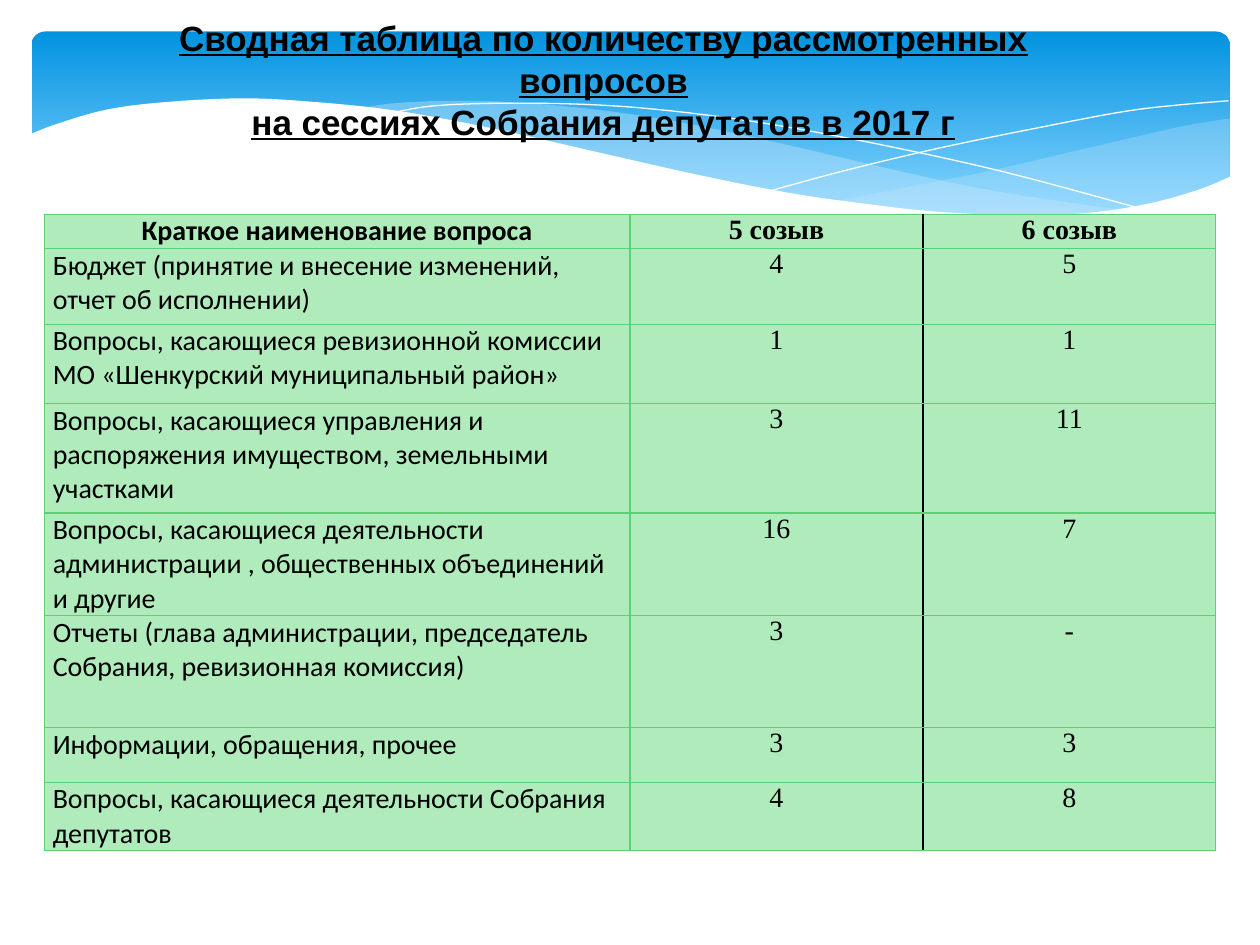
from dataclasses import dataclass

from lxml import etree
from pptx import Presentation
from pptx.dml.color import RGBColor
from pptx.enum.shapes import MSO_SHAPE
from pptx.enum.text import MSO_ANCHOR, MSO_AUTO_SIZE, PP_ALIGN
from pptx.oxml.ns import qn
from pptx.util import Pt

ROUNDED = MSO_SHAPE.ROUNDED_RECTANGLE
CENTER, LEFT = PP_ALIGN.CENTER, PP_ALIGN.LEFT
MIDDLE = MSO_ANCHOR.MIDDLE
NO_AUTOFIT = MSO_AUTO_SIZE.NONE
TITLE_ONLY = 5

COLORS = {
    "sky_top": "0293E0",
    "sky_bottom": "83D3FE",
    "mist": "C6E7FC",
    "white": "FFFFFF",
    "text": "000000",
    "cell": "B0EBBC",
    "grid": "5BD078",
}

Points = list[tuple[float, float]]


@dataclass
class Wave:
    """An outline of smooth edges (knots in points); stroked if open, filled if closed."""
    edges: list[Points]
    color: str
    opacity: int = 100
    closed: bool = True


@dataclass
class Row:
    topic: str
    fifth: str
    sixth: str
    height: float


WAVES = [
    Wave([[(702.7, 67.7), (673.2, 72.7), (619.9, 85), (560.9, 98.6), (475.9, 115.2)],
          [(475.9, 115.2), (507.6, 118.8), (545, 122.4), (586.1, 123.8), (621.4, 122.4),
           (651.6, 117.4), (678.2, 110.9), (702.7, 101.5)]], "mist", 29),
    Wave([[(643, 120.2), (602.6, 114.5), (558, 107.3), (508.3, 96.5), (452.9, 83.5),
           (399.6, 72), (352.1, 64.1), (302.4, 59), (259.9, 57.6), (225.4, 59), (205.9, 61.9)],
          [(205.9, 61.9), (246.2, 67.7), (290.9, 76.3), (353.5, 90.7), (407.5, 103),
           (456.5, 112.3), (500.4, 118.8), (547.9, 123.1), (589, 124.6), (617, 123.1),
           (643, 120.2)]], "mist", 40),
    Wave([[(222.5, 64.8), (247.7, 60.5), (288.7, 59), (337.7, 59.8), (383.8, 63.4),
           (437.8, 70.6), (500.4, 82.1), (572.4, 97.9), (653, 119.5)]], "white", closed=False),
    Wave([[(441.4, 108.7), (483.8, 97.2), (538.6, 84.2), (601.9, 71.3), (644.4, 63.4),
           (675.4, 59.8), (702, 57.6)]], "white", closed=False),
    Wave([[(16.6, 77), (33.1, 70.6), (61.2, 62.6), (95, 58.3), (139, 56.2), (180, 58.3),
           (227.5, 63.4), (281.5, 73.4), (342, 87.1), (399.6, 100.1), (450.7, 110.2),
           (495.4, 116.6), (535.7, 121), (582.5, 123.1), (621.4, 121.7), (655.2, 116.6),
           (684, 108.7), (703.4, 100.8)],
          [(703.4, 161.3), (16.6, 161.3)]], "white"),
]

TITLE = ["Сводная таблица по количеству рассмотренных вопросов",
         "на сессиях Собрания депутатов в 2017 г"]

ROWS = [
    Row("Краткое наименование вопроса", "5 созыв", "6 созыв", 19.4),
    Row("Бюджет (принятие и внесение изменений, отчет об исполнении)", "4", "5", 43.2),
    Row("Вопросы, касающиеся ревизионной комиссии МО «Шенкурский муниципальный район»",
        "1", "1", 45.4),
    Row("Вопросы, касающиеся управления и распоряжения имуществом, земельными участками",
        "3", "11", 62.6),
    Row("Вопросы, касающиеся деятельности администрации , общественных объединений и другие",
        "16", "7", 37.4),
    Row("Отчеты (глава администрации, председатель Собрания, ревизионная комиссия)",
        "3", "-", 64.1),
    Row("Информации, обращения, прочее", "3", "3", 31),
    Row("Вопросы, касающиеся деятельности Собрания депутатов", "4", "8", 35.3),
]
COLUMN_WIDTHS = [334.8, 167.4, 167.4]


def rgb(name: str) -> RGBColor:
    return RGBColor.from_string(COLORS[name])


def smooth(knots: Points, steps: int = 5) -> Points:
    """Sample a Catmull-Rom curve through the knots; two knots stay a straight line."""
    if len(knots) == 2:
        return knots
    padded = [knots[0], *knots, knots[-1]]
    curve = [knots[0]]
    for a, b, c, d in zip(padded, padded[1:], padded[2:], padded[3:]):
        for step in range(1, steps + 1):
            t = step / steps
            x, y = (q + t / 2 * (r - p + t * (2 * p - 5 * q + 4 * r - s
                                              + t * (3 * (q - r) + s - p)))
                    for p, q, r, s in zip(a, b, c, d))
            curve.append((x, y))
    return curve


def draw_sky(slide) -> None:
    sky = slide.shapes.add_shape(ROUNDED, Pt(18), Pt(18), Pt(684.7), Pt(112.3))
    sky.adjustments[0] = 0.07
    sky.shadow.inherit = False
    sky.line.fill.background()
    sky.fill.gradient()
    sky.fill.gradient_angle = 270
    for stop, name, position in zip(sky.fill.gradient_stops,
                                    ("sky_top", "sky_bottom"), (0, 0.9)):
        stop.color.rgb = rgb(name)
        stop.position = position


def draw_wave(slide, wave: Wave) -> None:
    outline = [(Pt(x), Pt(y)) for edge in wave.edges for x, y in smooth(edge)]
    builder = slide.shapes.build_freeform(*outline[0])
    builder.add_line_segments(outline[1:], close=wave.closed)
    shape = builder.convert_to_shape()
    shape.shadow.inherit = False
    if not wave.closed:
        shape.fill.background()
        shape.line.color.rgb = rgb(wave.color)
        shape.line.width = Pt(0)
        return
    shape.line.fill.background()
    shape.fill.solid()
    shape.fill.fore_color.rgb = rgb(wave.color)
    if wave.opacity < 100:
        color = shape.element.spPr.find(qn("a:solidFill"))[0]
        etree.SubElement(color, qn("a:alpha"), val=str(wave.opacity * 1000))


def write_title(slide) -> None:
    title = slide.shapes.title
    title.left, title.top, title.width, title.height = Pt(44.6), Pt(16.6), Pt(600.5), Pt(77.8)
    title.element.getparent().append(title.element)  # in front of the waves
    frame = title.text_frame
    frame.word_wrap = True
    frame.auto_size = NO_AUTOFIT
    frame.vertical_anchor = MIDDLE
    frame.margin_left = frame.margin_right = Pt(8)
    frame.margin_top, frame.margin_bottom = Pt(3.6), Pt(24)
    frame.text = "\n".join(TITLE)
    for line in frame.paragraphs:
        line.alignment = CENTER
        line.line_spacing = Pt(24)
        line.font.name, line.font.size = "Arial", Pt(20)
        line.font.bold = line.font.underline = True
        line.font.color.rgb = rgb("text")


def add_border(cell, side: str, color: str, width: float) -> None:
    border = etree.SubElement(cell._tc.get_or_add_tcPr(), qn(f"a:ln{side}"), w=str(Pt(width)))
    fill = etree.SubElement(border, qn("a:solidFill"))
    etree.SubElement(fill, qn("a:srgbClr"), val=COLORS[color])


def write_cell(cell, text: str, column: int, is_header: bool) -> None:
    dividers = {(1, "R"), (2, "L")}  # the black rule between the two convocations
    for side in "LRTB":
        add_border(cell, side, *(("text", 1) if (column, side) in dividers else ("grid", 0.75)))
    cell.fill.solid()
    cell.fill.fore_color.rgb = rgb("cell")
    cell.margin_left = cell.margin_right = Pt(5)
    cell.margin_top = cell.margin_bottom = Pt(0)
    cell.text = text
    paragraph = cell.text_frame.paragraphs[0]
    paragraph.alignment = CENTER if is_header or column else LEFT
    paragraph.font.name = "Times New Roman" if column else "Calibri"
    paragraph.font.size = Pt(16)
    paragraph.font.bold = is_header
    paragraph.font.color.rgb = rgb("text")


def draw_table(slide) -> None:
    table = slide.shapes.add_table(
        len(ROWS), len(COLUMN_WIDTHS), Pt(25.2), Pt(122.4),
        Pt(sum(COLUMN_WIDTHS)), Pt(sum(row.height for row in ROWS))).table
    for column, width in zip(table.columns, COLUMN_WIDTHS):
        column.width = Pt(width)
    for index, row in enumerate(ROWS):
        table.rows[index].height = Pt(row.height)
        for column, text in enumerate((row.topic, row.fifth, row.sixth)):
            write_cell(table.cell(index, column), text, column, index == 0)


def main() -> None:
    deck = Presentation()
    deck.slide_width, deck.slide_height = Pt(720), Pt(540)
    slide = deck.slides.add_slide(deck.slide_layouts[TITLE_ONLY])
    draw_sky(slide)
    for wave in WAVES:
        draw_wave(slide, wave)
    write_title(slide)
    draw_table(slide)
    deck.save("out.pptx")


if __name__ == "__main__":
    main()
